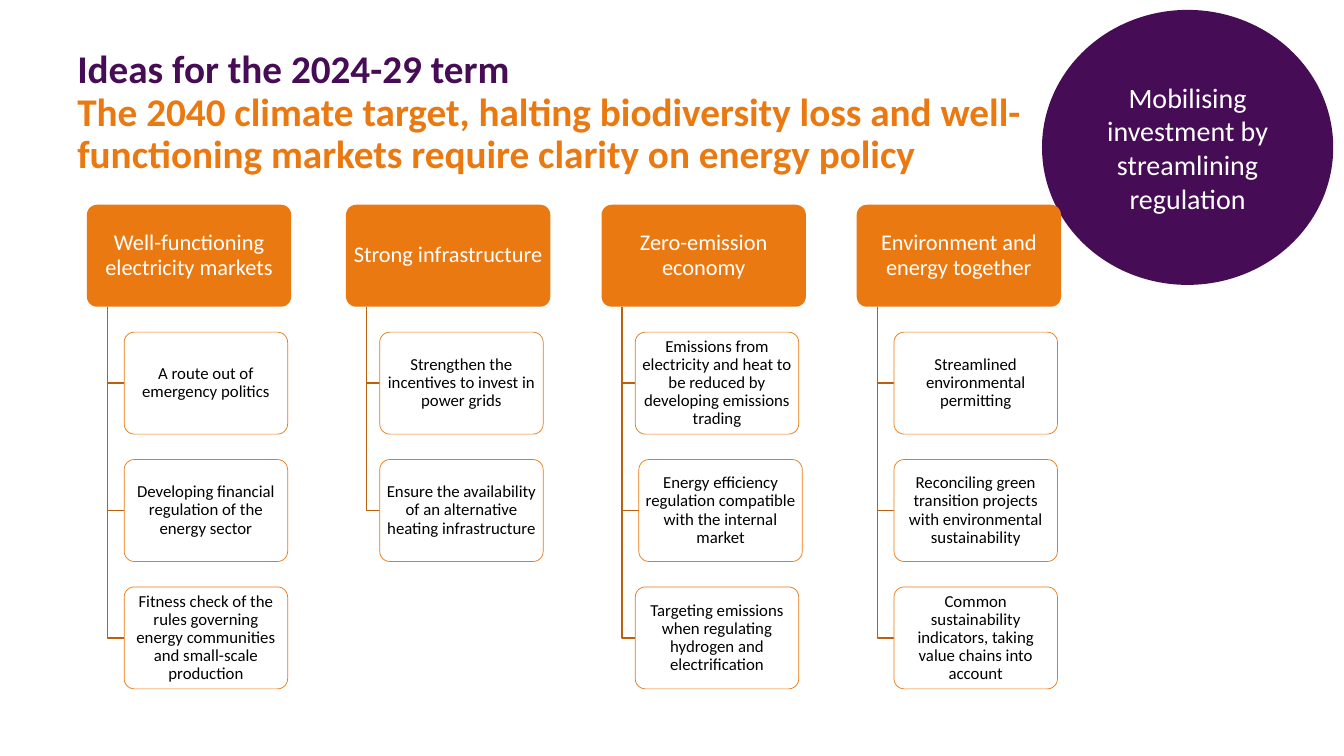
from pptx import Presentation
from pptx.dml.color import RGBColor
from pptx.enum.shapes import MSO_SHAPE
from pptx.enum.text import MSO_ANCHOR, PP_ALIGN
from pptx.util import Cm, Pt

ELLIPSE = MSO_SHAPE.OVAL
ROUNDED = MSO_SHAPE.ROUNDED_RECTANGLE
MIDDLE = MSO_ANCHOR.MIDDLE
CENTER = PP_ALIGN.CENTER

PURPLE = RGBColor(0x46, 0x0D, 0x56)
ORANGE = RGBColor(0xEA, 0x79, 0x11)
BROWN = RGBColor(0xBB, 0x61, 0x0E)
WHITE = RGBColor(0xFF, 0xFF, 0xFF)
BLACK = RGBColor(0, 0, 0)
FONT = "Calibri"

BOX_HEIGHT = 2.57
ROW_PITCH = 3.21
TRUNK_INDENT = 0.52
CARD_WIDTH = 4.12
NARROW, WIDE = 0.85, 0.94

THEMES = [
    (2.19, "Well-functioning electricity markets", [
        (WIDE, "A route out of emergency politics"),
        (WIDE, "Developing financial regulation of the energy sector"),
        (WIDE, "Fitness check of the rules governing energy communities "
               "and small-scale production"),
    ]),
    (8.72, "Strong infrastructure", [
        (NARROW, "Strengthen the incentives to invest in power grids"),
        (NARROW, "Ensure the availability of an alternative heating infrastructure"),
    ]),
    (15.16, "Zero-emission economy", [
        (NARROW, "Emissions from electricity and heat to be reduced by "
                 "developing emissions trading"),
        (WIDE, "Energy efficiency regulation compatible with the internal market"),
        (NARROW, "Targeting emissions when regulating hydrogen and electrification"),
    ]),
    (21.59, "Environment and energy together", [
        (WIDE, "Streamlined environmental permitting"),
        (WIDE, "Reconciling green transition projects with environmental sustainability"),
        (WIDE, "Common sustainability indicators, taking value chains into account"),
    ]),
]


def style_run(run, size, color, bold=False):
    run.font.name = FONT
    run.font.size = Pt(size)
    run.font.color.rgb = color
    run.font.bold = bold


def add_label_shape(slide, preset, box, text, size, text_color, fill, outline=None):
    label = slide.shapes.add_shape(preset, *(Cm(length) for length in box))
    label.shadow.inherit = False
    label.fill.solid()
    label.fill.fore_color.rgb = fill
    if outline is None:
        label.line.fill.background()
    else:
        label.line.color.rgb = outline
        label.line.width = Pt(0.5)
    frame = label.text_frame
    frame.word_wrap = True
    frame.vertical_anchor = MIDDLE
    frame.text = text
    paragraph = frame.paragraphs[0]
    paragraph.alignment = CENTER
    style_run(paragraph.runs[0], size, text_color)
    return label


def add_tree_box(slide, box, text, size, text_color, fill, outline=None):
    tree_box = add_label_shape(slide, ROUNDED, box, text, size, text_color, fill, outline)
    tree_box.adjustments[0] = 0.1
    frame = tree_box.text_frame
    frame.margin_left = frame.margin_right = Cm(0.08)
    frame.margin_top = frame.margin_bottom = Cm(0.05)
    frame.paragraphs[0].line_spacing = 0.9


def add_branch(slide, left, top, width, height):
    right, bottom = Cm(left + width), Cm(top + height)
    outline = slide.shapes.build_freeform(Cm(left), Cm(top))
    outline.add_line_segments([(Cm(left), bottom), (right, bottom)], close=False)
    branch = outline.convert_to_shape()
    branch.shadow.inherit = False
    branch.fill.background()
    branch.line.color.rgb = BROWN
    branch.line.width = Pt(1)


def add_theme(slide, left, top, width, heading, ideas):
    add_tree_box(slide, (left, top, width, BOX_HEIGHT), heading, 16, WHITE, ORANGE)
    for row, (indent, idea) in enumerate(ideas, start=1):
        drop = row * ROW_PITCH
        add_branch(slide, left + TRUNK_INDENT, top + BOX_HEIGHT,
                   indent - TRUNK_INDENT, drop - BOX_HEIGHT / 2)
        add_tree_box(slide, (left + indent, top + drop, CARD_WIDTH, BOX_HEIGHT),
                     idea, 12, BLACK, WHITE, ORANGE)


def add_title(slide, left, top, width, height):
    title = slide.shapes.add_textbox(Cm(left), Cm(top), Cm(width), Cm(height))
    frame = title.text_frame
    frame.word_wrap = True
    frame.vertical_anchor = MIDDLE
    frame.text = ("Ideas for the 2024-29 term\v"
                  "The 2040 climate target, halting biodiversity loss and "
                  "well-functioning markets require clarity on energy policy")
    paragraph = frame.paragraphs[0]
    paragraph.line_spacing = 0.9
    for run, color in zip(paragraph.runs, (PURPLE, ORANGE)):
        style_run(run, 28, color, bold=True)


def main():
    presentation = Presentation()
    presentation.slide_width = Cm(33.87)
    presentation.slide_height = Cm(19.05)
    slide = presentation.slides.add_slide(presentation.slide_layouts[6])
    add_label_shape(slide, ELLIPSE, (26.26, 0.25, 7.34, 6.93),
                    "Mobilising investment by streamlining regulation",
                    20, WHITE, PURPLE)
    add_title(slide, 1.7, 1.02, 26.19, 3.68)
    for left, heading, ideas in THEMES:
        add_theme(slide, left, 5.16, 5.15, heading, ideas)
    presentation.save("out.pptx")


if __name__ == "__main__":
    main()
